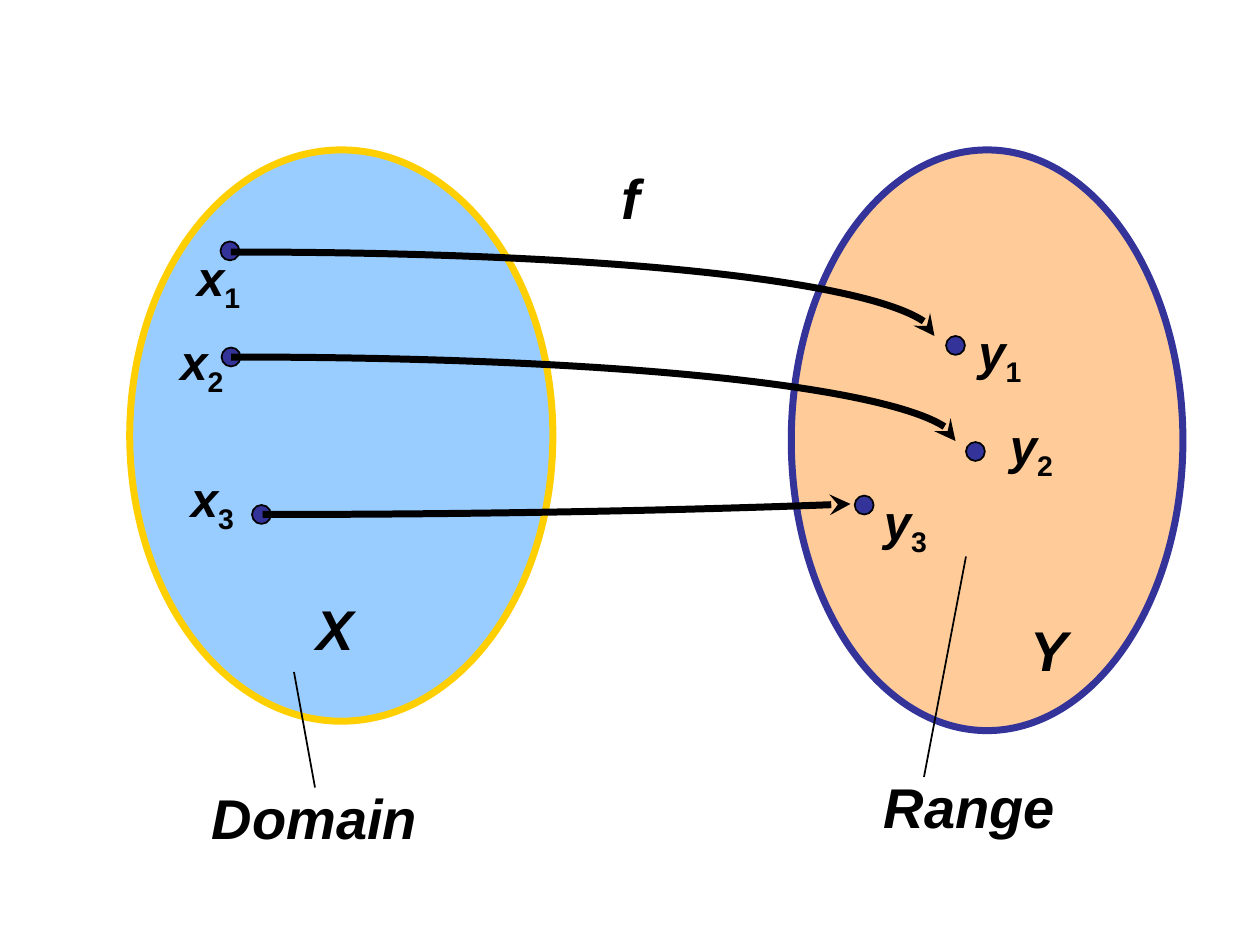
from lxml.etree import SubElement
from pptx import Presentation
from pptx.dml.color import RGBColor
from pptx.enum.shapes import MSO_CONNECTOR, MSO_SHAPE
from pptx.enum.text import MSO_AUTO_SIZE
from pptx.oxml.ns import qn
from pptx.util import Inches, Pt

BLACK = RGBColor(0, 0, 0)
SKY = RGBColor(0x99, 0xCC, 0xFF)
GOLD = RGBColor(0xFF, 0xCF, 0x01)
PEACH = RGBColor(0xFF, 0xCC, 0x99)
NAVY = RGBColor(0x33, 0x33, 0x99)

# The slide is a grid of 120 columns by 90 rows
CELL = Inches(10) / 120
OVAL_INSET = (0.36, 0.28)
DOT = 1.8
NAME_ROWS, POINT_ROWS = 7.6, 6.8


def place(box, column, row):
    """Turn a cell offset within a box into a slide position."""
    return round((box[0] + column) * CELL), round((box[1] + row) * CELL)


def size(columns, rows):
    return round(columns * CELL), round(rows * CELL)


def add_oval(page, box, offset, extent, fill, line, weight):
    oval = page.shapes.add_shape(
        MSO_SHAPE.OVAL, *place(box, *offset), *size(*extent))
    oval.shadow.inherit = False
    oval.fill.solid()
    oval.fill.fore_color.rgb = fill
    oval.line.color.rgb = line
    oval.line.width = Pt(weight)


def add_label(page, box, offset, extent, points, text, subscript=""):
    label = page.shapes.add_textbox(*place(box, *offset), *size(*extent))
    frame = label.text_frame
    frame.word_wrap = True
    frame.auto_size = MSO_AUTO_SIZE.SHAPE_TO_FIT_TEXT
    para = frame.paragraphs[0]
    before = SubElement(para._p.get_or_add_pPr(), qn("a:spcBef"))
    SubElement(before, qn("a:spcPct")).set("val", "50000")
    for part in filter(None, (text, subscript)):
        span = para.add_run()
        span.text = part
        span.font.name = "Arial"
        span.font.size = Pt(points)
        span.font.bold = True
        span.font.italic = part == text
        span.font.color.rgb = BLACK
        if part == subscript:
            span._r.get_or_add_rPr().set("baseline", "-25000")


def add_leader(page, box, start, end):
    leader = page.shapes.add_connector(
        MSO_CONNECTOR.STRAIGHT, *place(box, *start), *place(box, *end))
    leader.line.color.rgb = BLACK
    leader.line.width = Pt(1)
    SubElement(leader._element.spPr, qn("a:effectLst"))


def add_curved_arrow(page, box, start, *controls):
    builder = page.shapes.build_freeform(*place(box, *start), scale=1.0)
    builder.add_line_segments([place(box, *spot) for spot in controls],
                              close=False)
    arrow = builder.convert_to_shape()
    # Join the three segments' points into one Bezier curve
    outline = next(arrow._element.iter(qn("a:path")))
    segments = outline.findall(qn("a:lnTo"))
    curve = SubElement(outline, qn("a:cubicBezTo"))
    for segment in segments:
        curve.append(segment[0])
        outline.remove(segment)
    arrow.shadow.inherit = False
    arrow.fill.background()
    arrow.line.color.rgb = BLACK
    arrow.line.width = Pt(4)
    SubElement(arrow.line._get_or_add_ln(), qn("a:tailEnd")).set(
        "type", "stealth")


def add_set(page, box, colors, letter, points, point_columns,
            name, caption, leader):
    """Draw one set: its oval, points, letter, caption and leader line."""
    add_oval(page, box, OVAL_INSET, box[2:], *colors, 4)
    for number, (dot, label) in enumerate(points, start=1):
        add_oval(page, box, dot, (DOT, DOT), NAVY, BLACK, 1)
        add_label(page, box, label, (point_columns, POINT_ROWS), 28,
                  letter.lower(), str(number))
    for text, (column, row, columns) in ((letter, name), caption):
        add_label(page, box, (column, row), (columns, NAME_ROWS), 32, text)
    add_leader(page, box, *leader)


def add_mapping(page, box):
    """Draw the arrows between the sets and the function's name."""
    for curve in (
        ((0, 0), (37, 0), (67, 3.6), (67, 8)),
        ((0, 10), (38.1, 10), (69, 13.7), (69, 18)),
        ((3, 25), (23.7, 25), (43.6, 24.6), (59, 24)),
    ):
        add_curved_arrow(page, box, *curve)
    add_label(page, box, (36, -9), (11, NAME_ROWS), 32, "f")


def main():
    deck = Presentation()
    deck.slide_width, deck.slide_height = Inches(10), Inches(7.5)
    page = deck.slides.add_slide(deck.slide_layouts[6])

    # Domain: each point is a dot offset and a label offset
    add_set(page, (12, 14, 40.3, 54.4), (SKY, GOLD), "X",
            [((9, 9), (5.6, 9)),
             ((9.1, 19.1), (4, 17)),
             ((12, 34.1), (5, 30))],
            8, (17, 42, 11), ("Domain", (7, 60, 47)),
            ((16, 50), (18, 61)))

    # Range
    add_set(page, (75, 14, 37.3, 55.3), (PEACH, NAVY), "Y",
            [((15.1, 18), (17, 16)),
             ((17, 28.1), (20, 25)),
             ((6.4, 33.2), (8, 32.2))],
            12, (22, 44, 9), ("Range", (8, 59, 28)),
            ((17, 39), (13, 60)))

    add_mapping(page, (22, 24))
    deck.save("out.pptx")


if __name__ == "__main__":
    main()
